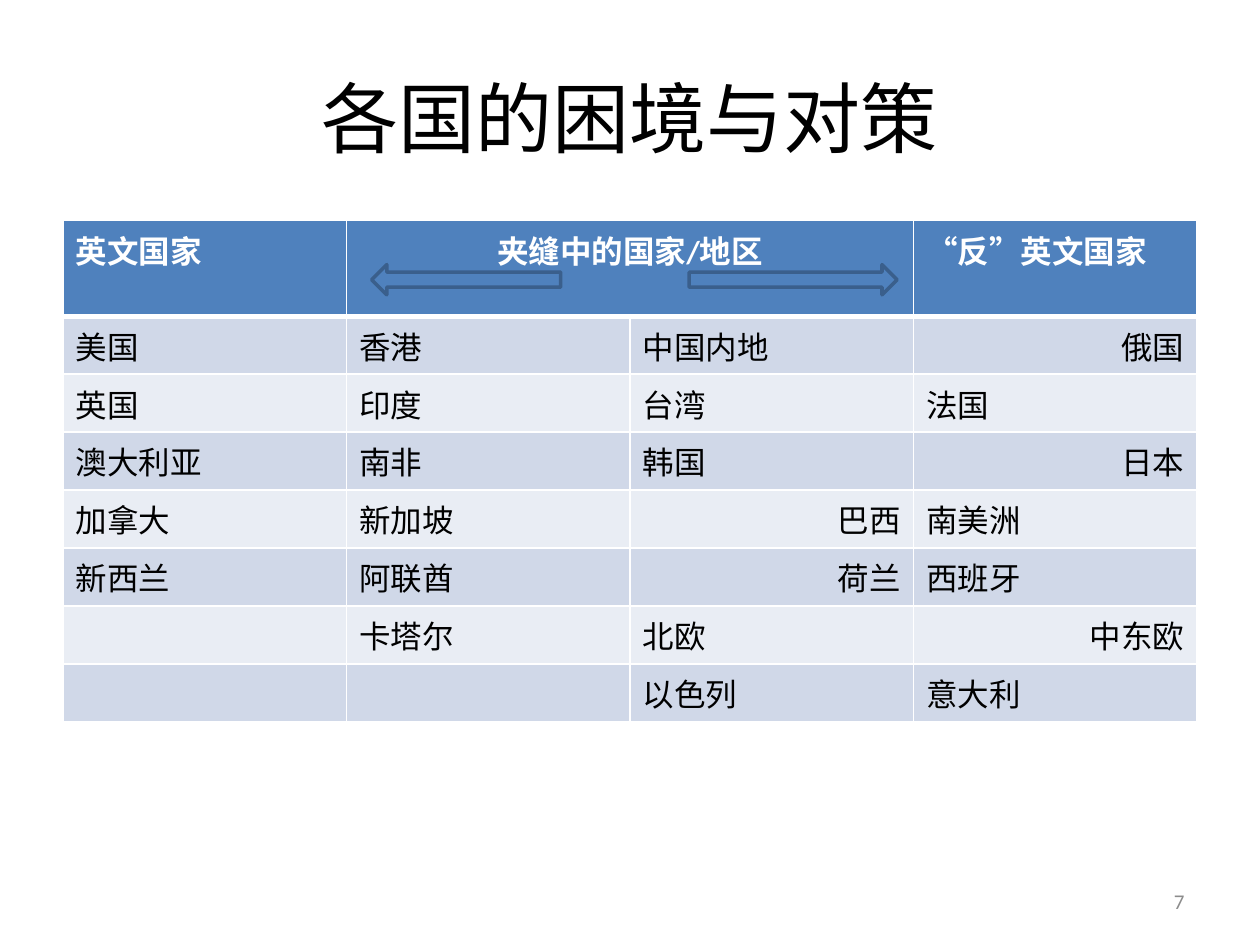
"""Build the slide on the dilemmas and responses of countries."""
from lxml import etree
from pptx import Presentation
from pptx.dml.color import RGBColor
from pptx.enum.shapes import MSO_SHAPE
from pptx.enum.text import MSO_ANCHOR, PP_ALIGN
from pptx.oxml.ns import qn
from pptx.util import Inches, Pt

LEFT, CENTER, RIGHT = PP_ALIGN.LEFT, PP_ALIGN.CENTER, PP_ALIGN.RIGHT
MIDDLE = MSO_ANCHOR.MIDDLE
LEFT_ARROW, RIGHT_ARROW = MSO_SHAPE.LEFT_ARROW, MSO_SHAPE.RIGHT_ARROW
BLUE, WHITE, BLACK = "4F81BD", "FFFFFF", "000000"
BANDS = ["E9EDF4", "D0D8E8"]
HEADER = ["英文国家", "夹缝中的国家/地区", "", "“反”英文国家"]
COUNTRIES = [
    ["美国", "香港", "中国内地", "俄国"],
    ["英国", "印度", "台湾", "法国"],
    ["澳大利亚", "南非", "韩国", "日本"],
    ["加拿大", "新加坡", "巴西", "南美洲"],
    ["新西兰", "阿联酋", "荷兰", "西班牙"],
    ["", "卡塔尔", "北欧", "中东欧"],
    ["", "", "以色列", "意大利"],
]
RIGHT_ALIGNED = {"俄国", "日本", "巴西", "荷兰", "中东欧"}


def color(value):
    return RGBColor.from_string(value)


def write(frame, text, size, ink, align=LEFT, bold=False):
    frame.text = text
    para = frame.paragraphs[0]
    para.alignment = align
    para.font.size = Pt(size)
    for span in para.runs:
        span.font.name = "Calibri"
        span.font.size = Pt(size)
        span.font.bold = bold
        span.font.color.rgb = color(ink)


deck = Presentation()
deck.slide_width, deck.slide_height = Inches(10), Inches(7.5)
page = deck.slides.add_slide(deck.slide_layouts[6])

for left, top, width, height, text, size, ink, align in [
    (0.5, 0.3, 9, 1.25, "各国的困境与对策", 44, BLACK, CENTER),
    (7.17, 6.95, 2.33, 0.4, "7", 12, "8C8C8C", RIGHT),
]:
    box = page.shapes.add_textbox(Inches(left), Inches(top), Inches(width), Inches(height))
    box.text_frame.word_wrap = True
    box.text_frame.vertical_anchor = MIDDLE
    write(box.text_frame, text, size, ink, align)

rows = [HEADER] + COUNTRIES
table = page.shapes.add_table(
    len(rows), len(HEADER), Inches(0.5), Inches(1.75), Inches(9), Inches(3.98)
).table
for row_index, texts in enumerate(rows):
    is_header = row_index == 0
    table.rows[row_index].height = Inches(0.76 if is_header else 0.46)
    for column_index, text in enumerate(texts):
        cell = table.cell(row_index, column_index)
        properties = cell._tc.get_or_add_tcPr()
        for side in ("lnL", "lnR", "lnT", "lnB"):
            thick = (is_header and side == "lnB") or (row_index == 1 and side == "lnT")
            border = etree.SubElement(properties, qn(f"a:{side}"), w=str(Pt(3 if thick else 1)))
            paint = etree.SubElement(border, qn("a:solidFill"))
            etree.SubElement(paint, qn("a:srgbClr"), val=WHITE)
        cell.fill.solid()
        cell.fill.fore_color.rgb = color(BLUE if is_header else BANDS[row_index % 2])
        align = RIGHT if text in RIGHT_ALIGNED else LEFT
        if is_header and column_index == 1:
            align = CENTER
        write(cell.text_frame, text, 18, WHITE if is_header else BLACK, align, is_header)
table.cell(0, 1).merge(table.cell(0, 2))

for kind, left, width in [(LEFT_ARROW, 2.95, 1.5), (RIGHT_ARROW, 5.47, 1.65)]:
    arrow = page.shapes.add_shape(kind, Inches(left), Inches(2.1), Inches(width), Inches(0.24))
    arrow.shadow.inherit = False
    arrow.fill.solid()
    arrow.fill.fore_color.rgb = color(BLUE)
    arrow.line.color.rgb = color("3A5F8C")
    arrow.line.width = Pt(2)

deck.save("out.pptx")
